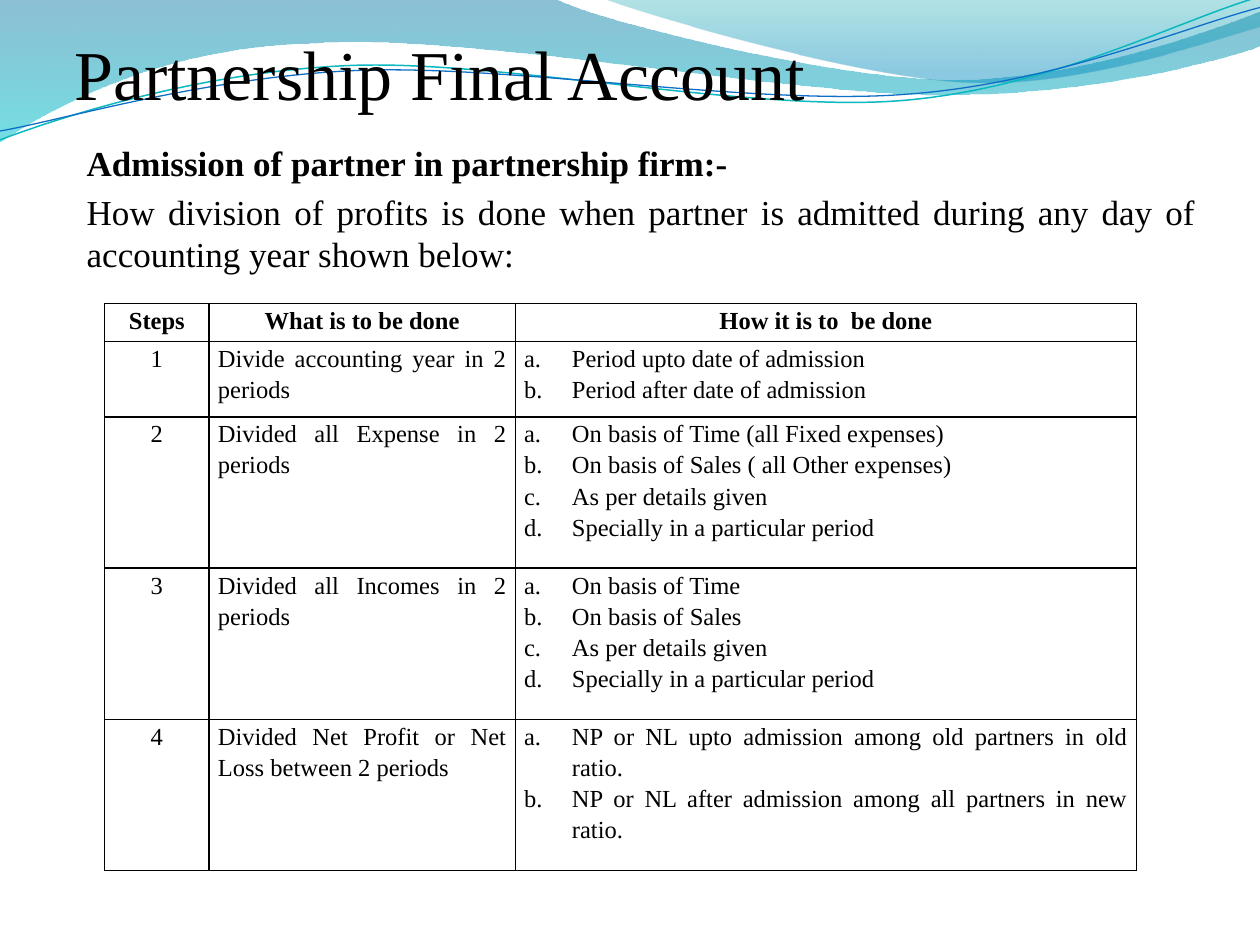
from math import cos, radians, sin

from lxml.etree import SubElement
from pptx import Presentation
from pptx.dml.color import RGBColor
from pptx.enum.text import MSO_ANCHOR, MSO_AUTO_SIZE, PP_ALIGN as Align
from pptx.oxml.ns import qn
from pptx.util import Inches, Pt

BLACK = RGBColor(0x00, 0x00, 0x00)
DEEP_BLUE = RGBColor(0x00, 0x74, 0xA1)
CYAN = RGBColor(0x00, 0xC6, 0xCF)
TEAL = RGBColor(0x00, 0xA1, 0xA9)
SKY_BLUE = RGBColor(0x00, 0x8B, 0xBF)
LINE_TEAL = RGBColor(0x0A, 0xB8, 0xBF)
LINE_BLUE = RGBColor(0x0F, 0x6F, 0xC6)
FONT = "Times New Roman"
TILT = 2.7


def draw_wave(shapes, start, segments, close):
    points = [start]
    for segment in segments:
        points += zip(segment[::2], segment[1::2])
    corners = [(Inches(x), Inches(y)) for x, y in points]
    builder = shapes.build_freeform(*corners[0])
    builder.add_line_segments(corners[1:], close=close)
    wave = builder.convert_to_shape()
    wave.shadow.inherit = False
    steps = iter(list(wave._element.iter(qn("a:lnTo"))))
    for segment in segments:
        first = next(steps)
        if len(segment) == 6:
            first.tag = qn("a:cubicBezTo")
            for step in (next(steps), next(steps)):
                first.append(step[0])
                step.getparent().remove(step)
    return wave


def write(paragraph, text, size, align, bold=False):
    paragraph.alignment = align
    run = paragraph.add_run()
    run.text = text
    run.font.name = FONT
    run.font.size = Pt(size)
    run.font.bold = bold
    run.font.color.rgb = BLACK


prs = Presentation()
prs.slide_width, prs.slide_height = Inches(10), Inches(7.5)
slide = prs.slides.add_slide(prs.slide_layouts[5])
shapes = slide.shapes

filled_waves = [
    ((0, 0), [(4.4, -0.01), (4.76, 0.17, 6.64, 0.63, 7.58, 0.63),
              (8.53, 0.63, 9.58, 0.26, 10, 0.09), (10.01, 0.36),
              (9.83, 0.44, 8.7, 0.76, 7.46, 0.75),
              (6.22, 0.75, 3.82, 0.28, 2.57, 0.34),
              (1.29, 0.36, 0.46, 0.83, -0.01, 1.13), (0, 0)],
     [(0, DEEP_BLUE, 45), (1, CYAN, 55)]),
    ((4.79, -0.01), [(5.09, 0.11, 6.82, 0.62, 7.69, 0.65),
                     (8.56, 0.69, 9.61, 0.32, 10, 0.21), (10, 0), (4.79, -0.01)],
     [(0, TEAL, 30), (0.8, SKY_BLUE, 45)]),
]
for start, segments, stops in filled_waves:
    wave = draw_wave(shapes, start, segments, True)
    wave.line.fill.background()
    wave.fill.gradient()
    wave.fill.gradient_angle = 270
    for stop, (position, color, opacity) in zip(wave.fill.gradient_stops, stops):
        stop.position = position
        stop.color.rgb = color
    for tint, (position, color, opacity) in zip(wave._element.spPr.iter(qn("a:srgbClr")), stops):
        SubElement(tint, qn("a:alpha"), val=str(opacity * 1000))

wave_lines = [
    ((0, 1.11, 0.48, 0.93, 1.58, 0.57, 2.77, 0.52, 3.95, 0.47, 5.93, 0.89, 7.13, 0.8,
      8.33, 0.71, 9.38, 0.15, 9.98, -0.02), (4.99, 0.57), LINE_TEAL, 0.85),
    ((0, 1.04, 0.47, 0.96, 1.64, 0.61, 2.83, 0.56, 4.03, 0.51, 5.97, 0.84, 7.17, 0.75,
      8.36, 0.67, 9.41, 0.21, 10, 0.06), (5, 0.59), LINE_BLUE, 0.75),
]
turn_cos, turn_sin = cos(radians(TILT)), sin(radians(TILT))
for coordinates, (middle_x, middle_y), color, width in wave_lines:
    level = []
    for x, y in zip(coordinates[::2], coordinates[1::2]):
        dx, dy = x - middle_x, y - middle_y
        level += [middle_x + dx * turn_cos - dy * turn_sin,
                  middle_y + dx * turn_sin + dy * turn_cos]
    curves = [level[i:i + 6] for i in range(2, len(level), 6)]
    wave = draw_wave(shapes, level[:2], curves, False)
    wave.rotation = 360 - TILT
    wave.fill.background()
    wave.line.color.rgb = color
    wave.line.width = Pt(width)

title = shapes.title
shapes._spTree.append(title._element)
title.left, title.top, title.width, title.height = (Inches(v) for v in (0.59, -0.34, 9, 1.25))
title_frame = title.text_frame
title_frame.auto_size = MSO_AUTO_SIZE.NONE
title_frame.vertical_anchor = MSO_ANCHOR.BOTTOM
title_frame.margin_left = title_frame.margin_right = title_frame.margin_bottom = 0
title_frame.margin_top = Inches(0.05)
write(title_frame.paragraphs[0], "Partnership Final Account", 40, Align.LEFT)

intro = shapes.add_textbox(Inches(0.59), Inches(1.07), Inches(9), Inches(6.06)).text_frame
intro.word_wrap = True
heading = intro.paragraphs[0]
question = intro.add_paragraph()
write(heading, "Admission of partner in partnership firm:-", 20, Align.JUSTIFY, True)
write(question, "How division of profits is done when partner is admitted during any day of "
      "accounting year shown below:", 20, Align.JUSTIFY)
for paragraph in (heading, question):
    paragraph.space_before = Pt(4)

header = ["Steps", "What is to be done", "How it is to  be done"]
steps = [
    ("Divide accounting year in 2 periods",
     ["Period upto date of admission", "Period after date of admission"]),
    ("Divided all Expense in 2 periods",
     ["On basis of Time (all Fixed expenses)", "On basis of Sales ( all Other expenses)",
      "As per details given ", "Specially in a particular period"]),
    ("Divided all Incomes in 2 periods",
     ["On basis of Time ", "On basis of Sales ",
      "As per details given ", "Specially in a particular period"]),
    ("Divided Net Profit or Net Loss between 2 periods",
     ["NP or NL upto admission among old partners in old ratio.",
      "NP or NL after admission among all partners in new ratio."]),
]
column_widths = [0.83, 2.43, 4.93]
row_heights = [0.3, 0.6, 1.2, 1.2, 1.2]
table = shapes.add_table(len(row_heights), len(column_widths), Inches(0.83), Inches(2.41),
                         Inches(sum(column_widths)), Inches(sum(row_heights))).table
table.first_row = table.horz_banding = False
for column, width in zip(table.columns, column_widths):
    column.width = Inches(width)
for row, height in zip(table.rows, row_heights):
    row.height = Inches(height)

rows = [[[text] for text in header]]
rows += [[[str(number)], [task], methods] for number, (task, methods) in enumerate(steps, 1)]
for r, row in enumerate(rows):
    for c, lines in enumerate(row):
        cell = table.cell(r, c)
        cell.margin_left = cell.margin_right = Inches(0.07)
        cell.margin_top = cell.margin_bottom = 0
        properties = cell._tc.get_or_add_tcPr()
        for side in ("a:lnL", "a:lnR", "a:lnT", "a:lnB"):
            border = SubElement(properties, qn(side), w=str(Pt(1)))
            SubElement(SubElement(border, qn("a:solidFill")), qn("a:srgbClr"), val=str(BLACK))
        cell.fill.background()
        frame = cell.text_frame
        for i, text in enumerate(lines):
            paragraph = frame.add_paragraph() if i else frame.paragraphs[0]
            centred = r == 0 or c == 0
            write(paragraph, text, 14, Align.CENTER if centred else Align.JUSTIFY, r == 0)
            paragraph.line_spacing = 1.15
            if r and c == 2:
                layout = paragraph._p.get_or_add_pPr()
                layout.set("marL", str(Inches(0.38)))
                layout.set("indent", str(-Inches(0.38)))
                SubElement(layout, qn("a:buFont"), typeface="+mj-lt")
                SubElement(layout, qn("a:buAutoNum"), type="alphaLcPeriod")

prs.save("out.pptx")
